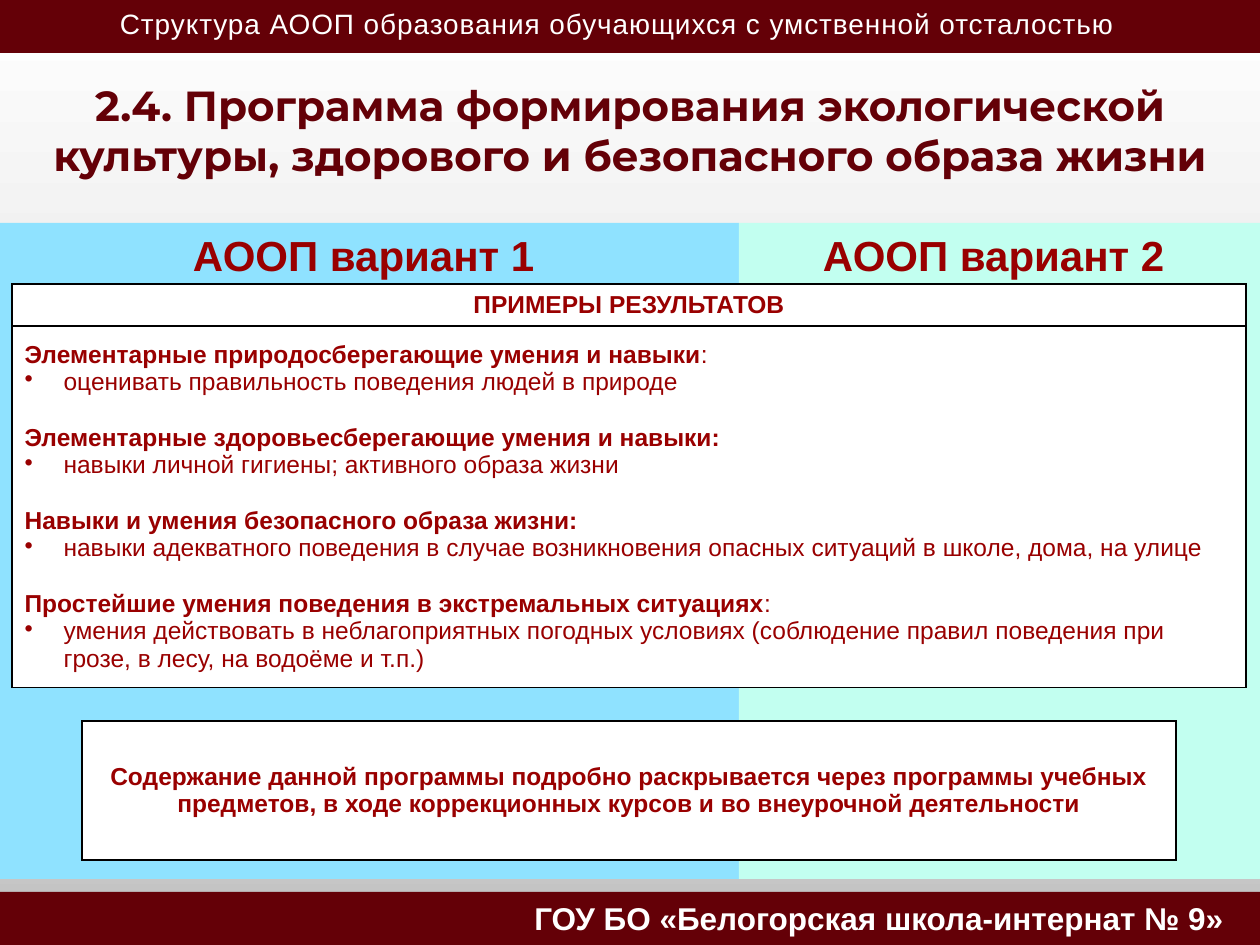
from lxml.etree import SubElement
from pptx import Presentation
from pptx.dml.color import RGBColor
from pptx.enum.shapes import MSO_SHAPE
from pptx.enum.text import MSO_ANCHOR, MSO_AUTO_SIZE, PP_ALIGN
from pptx.oxml.ns import qn
from pptx.util import Emu, Pt

SCALE = 914400 / 126
WIDTH, HEIGHT = 1260, 945
BAR_HEIGHT = 53
COLORS = {
    "maroon": "640007",
    "red": "990000",
    "blue": "8FE2FF",
    "mint": "C2FFF0",
    "white": "FFFFFF",
    "gray": "C2C2C2",
    "black": "000000",
}
VARIANTS = [
    ("АООП вариант 1 ", 0, 739, "blue"),
    ("АООП вариант 2 ", 739, 521, "mint"),
]
SKILLS = [
    ("Элементарные природосберегающие умения и навыки", ":", False,
     "оценивать правильность поведения людей в природе"),
    ("Элементарные здоровьесберегающие умения и навыки", ":", True,
     "навыки личной гигиены; активного образа жизни"),
    ("Навыки и умения безопасного образа жизни", ":", True,
     "навыки адекватного поведения в случае возникновения опасных ситуаций "
     "в школе, дома, на улице"),
    ("Простейшие умения поведения в экстремальных ситуациях", ":", False,
     "умения действовать в неблагоприятных погодных условиях (соблюдение "
     "правил поведения при грозе, в лесу, на водоёме и т.п.)"),
]


def px(*lengths):
    return [Emu(round(length * SCALE)) for length in lengths]


def rgb(color):
    return RGBColor.from_string(COLORS[color])


def write(paragraph, text, size=14, color="red", bold=False, font="Arial",
          align=PP_ALIGN.LEFT, tracking=0):
    paragraph.alignment = align
    run = paragraph.add_run()
    run.text = text
    run.font.size = Pt(size)
    run.font.name = font
    run.font.bold = bold
    run.font.color.rgb = rgb(color)
    if tracking:
        run.font._element.set("spc", str(tracking))


def add_bullet(paragraph, indent):
    properties = paragraph._p.get_or_add_pPr()
    hanging = px(indent)[0]
    properties.set("marL", str(hanging))
    properties.set("indent", str(-hanging))
    SubElement(properties, qn("a:buChar"), char="•")


def add_panel(slide, left, top, width, height, color):
    panel = slide.shapes.add_shape(MSO_SHAPE.RECTANGLE, *px(left, top, width, height))
    panel.shadow.inherit = False
    panel.fill.solid()
    panel.fill.fore_color.rgb = rgb(color)
    panel.line.fill.background()
    panel.text_frame.vertical_anchor = MSO_ANCHOR.TOP
    return panel


def add_caption(slide, text, left, top, width, height, **style):
    caption = slide.shapes.add_textbox(*px(left, top, width, height))
    caption.text_frame.word_wrap = True
    write(caption.text_frame.paragraphs[0], text, color="white", **style)


def format_cell(cell):
    cell.vertical_anchor = MSO_ANCHOR.MIDDLE
    properties = cell._tc.get_or_add_tcPr()
    for side in ("lnL", "lnR", "lnT", "lnB"):
        border = SubElement(properties, qn(f"a:{side}"), w=str(Pt(1)))
        fill = SubElement(border, qn("a:solidFill"))
        SubElement(fill, qn("a:srgbClr"), val=COLORS["black"])
    cell.fill.solid()
    cell.fill.fore_color.rgb = rgb("white")


def add_boxed_table(slide, left, top, width, row_heights):
    frame = slide.shapes.add_table(
        len(row_heights), 1, *px(left, top, width, sum(row_heights)))
    table = frame.table
    table.first_row = False
    table.horz_banding = False
    for row, height in zip(table.rows, px(*row_heights)):
        row.height = height
        format_cell(row.cells[0])
    return [row.cells[0].text_frame for row in table.rows]


def fill_skills(frame):
    for index, (skill, colon, bold_colon, example) in enumerate(SKILLS):
        heading = frame.add_paragraph() if index else frame.paragraphs[0]
        if index:
            heading.space_before = Pt(16)
        write(heading, skill, bold=True)
        write(heading, colon, bold=bold_colon)
        bullet = frame.add_paragraph()
        write(bullet, example)
        add_bullet(bullet, 39)


def set_background(slide):
    fill = slide.background.fill
    fill.gradient()
    fill.gradient_angle = 270
    for stop, position, color in zip(fill.gradient_stops, (0, 1), ("white", "gray")):
        stop.position = position
        stop.color.rgb = rgb(color)


def set_title(slide, text):
    title = slide.shapes.title
    title.left, title.top, title.width, title.height = px(0, 55, WIDTH, 149)
    frame = title.text_frame
    frame.word_wrap = True
    frame.auto_size = MSO_AUTO_SIZE.NONE
    frame.vertical_anchor = MSO_ANCHOR.MIDDLE
    write(frame.paragraphs[0], text, size=24, color="maroon", bold=True,
          font="Montserrat", align=PP_ALIGN.CENTER)


def main():
    presentation = Presentation()
    presentation.slide_width, presentation.slide_height = px(WIDTH, HEIGHT)
    slide = presentation.slides.add_slide(presentation.slide_layouts[5])
    set_background(slide)

    for top in (0, HEIGHT - BAR_HEIGHT):
        add_panel(slide, 0, top, WIDTH, BAR_HEIGHT, "maroon")
    add_caption(slide, "ГОУ БО «Белогорская школа-интернат № 9»", 25, 893, 1211, 50,
                size=18, bold=True, align=PP_ALIGN.RIGHT)
    add_caption(slide, "Структура АООП образования обучающихся с умственной отсталостью",
                0, 0, 1235, 47, size=16, align=PP_ALIGN.CENTER, tracking=58)
    set_title(slide, "2.4. Программа формирования экологической культуры, "
                     "здорового и безопасного образа жизни")

    for name, left, width, color in VARIANTS:
        panel = add_panel(slide, left, 223, width, 656, color)
        write(panel.text_frame.paragraphs[0], name, size=24, bold=True,
              align=PP_ALIGN.CENTER)

    results_heading, skills = add_boxed_table(slide, 12, 284, 1234, [40, 343])
    write(results_heading.paragraphs[0], "ПРИМЕРЫ РЕЗУЛЬТАТОВ", bold=True,
          align=PP_ALIGN.CENTER)
    fill_skills(skills)

    [conclusion] = add_boxed_table(slide, 82, 721, 1094, [139])
    write(conclusion.paragraphs[0],
          "Содержание данной программы подробно раскрывается через программы учебных "
          "предметов, в ходе коррекционных курсов и во внеурочной деятельности",
          bold=True, align=PP_ALIGN.CENTER)

    presentation.save("out.pptx")


if __name__ == "__main__":
    main()
